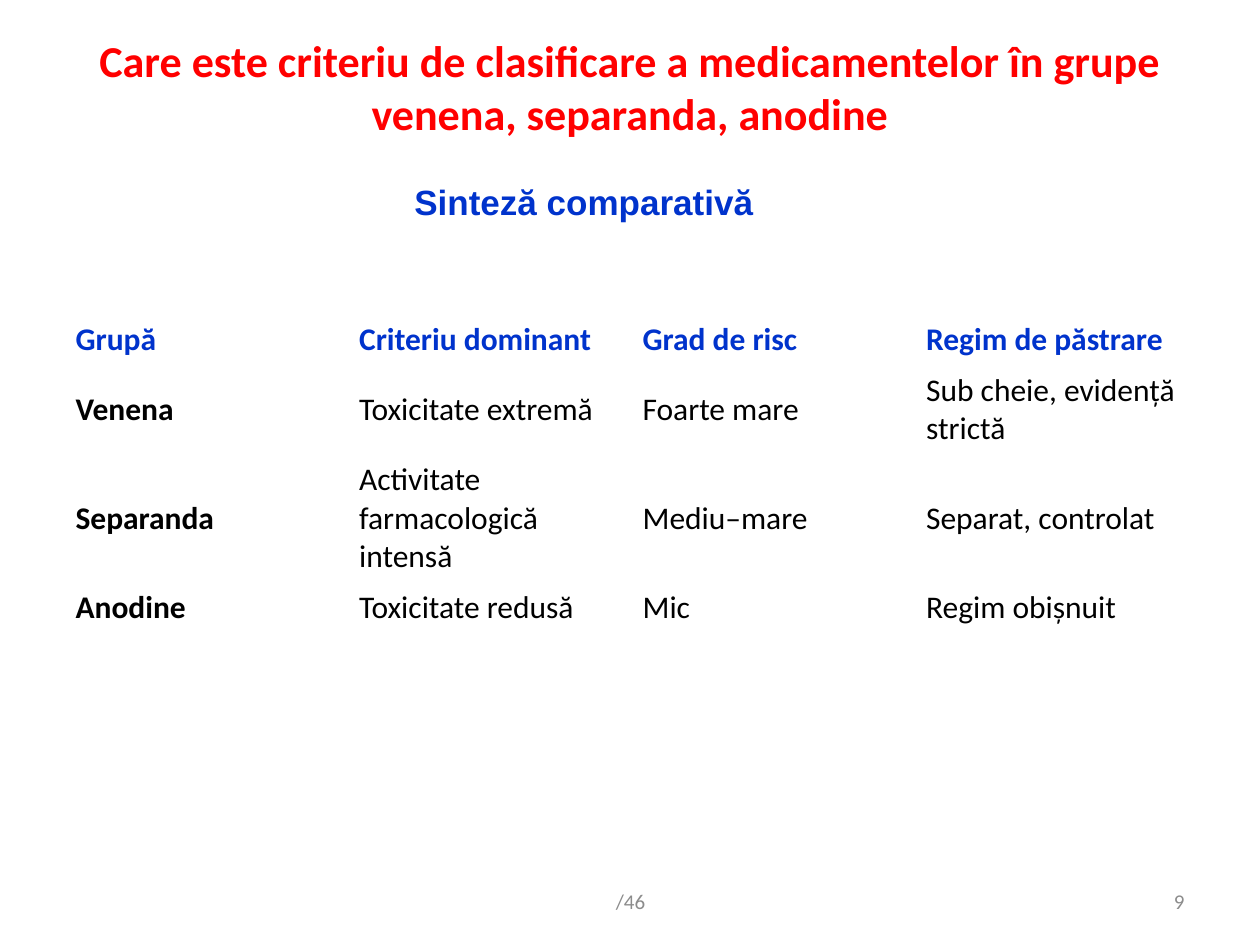
import pptx
import pptx.util
import pptx.dml.color
import pptx.enum.text
from dataclasses import dataclass

ALIGN = pptx.enum.text.PP_ALIGN
ANCHOR = pptx.enum.text.MSO_ANCHOR


@dataclass(frozen=True)
class Theme:
    font: str = "Calibri"
    accent_font: str = "Arial"
    red: str = "FF0000"
    blue: str = "0033CC"
    black: str = "000000"
    grey: str = "8C8C8C"
    title: float = 25.2
    subtitle: float = 20
    body: float = 18
    footer: float = 12


THEME = Theme()
WIDTH, HEIGHT = pptx.util.Inches(10), pptx.util.Inches(7.5)
MARGIN = 0.05  # share of the slide's width
CONTENT = 1 - 2 * MARGIN

ROWS = [
    ["Grupă", "Criteriu dominant", "Grad de risc", "Regim de păstrare"],
    ["Venena", "Toxicitate extremă", "Foarte mare", "Sub cheie, evidență strictă"],
    ["Separanda", "Activitate farmacologică intensă", "Mediu–mare", "Separat, controlat"],
    ["Anodine", "Toxicitate redusă", "Mic", "Regim obișnuit"],
]
ROW_HEIGHTS = [0.4, 0.7, 1.0, 0.4]  # inches, by number of text lines


def box(left, top, width, height):
    """Turn shares of the slide's size into lengths."""
    return (round(left * WIDTH), round(top * HEIGHT),
            round(width * WIDTH), round(height * HEIGHT))


def write(tf, text, size, color, bold=False, align=ALIGN.LEFT, font=THEME.font):
    p = tf.paragraphs[0]
    p.text = text
    p.alignment = align
    p.font.name = font
    p.font.size = pptx.util.Pt(size)
    p.font.bold = bold
    p.font.color.rgb = pptx.dml.color.RGBColor.from_string(color)


def add_title(slide, text):
    sp = slide.shapes.title
    sp.left, sp.top, sp.width, sp.height = box(MARGIN, 0.04, CONTENT, 0.1027)
    tf = sp.text_frame
    tf.word_wrap = True
    tf.auto_size = pptx.enum.text.MSO_AUTO_SIZE.NONE
    tf.vertical_anchor = ANCHOR.MIDDLE
    write(tf, text, THEME.title, THEME.red, True, ALIGN.CENTER)


def add_text(slide, place, text, *style, wrap=True, anchor=ANCHOR.MIDDLE):
    tf = slide.shapes.add_textbox(*box(*place)).text_frame
    tf.word_wrap = wrap
    tf.vertical_anchor = anchor
    write(tf, text, *style)


def add_table(slide, rows, heights):
    place = box(MARGIN, 0.332, CONTENT, sum(heights) / 7.5)
    table = slide.shapes.add_table(len(rows), len(rows[0]), *place).table
    table.first_row = table.horz_banding = False
    for i, (row, height) in enumerate(zip(rows, heights)):
        table.rows[i].height = pptx.util.Inches(height)
        for j, text in enumerate(row):
            cell = table.cell(i, j)
            cell.fill.background()
            cell.vertical_anchor = ANCHOR.MIDDLE
            color = THEME.blue if i == 0 else THEME.black
            write(cell.text_frame, text, THEME.body, color, i == 0 or j == 0)


def main():
    prs = pptx.Presentation()
    prs.slide_width, prs.slide_height = WIDTH, HEIGHT
    slide = prs.slides.add_slide(prs.slide_layouts[5])

    # Heading and comparison table
    add_title(slide, "Care este criteriu de clasificare a medicamentelor în grupe "
                     "venena, separanda, anodine")
    add_table(slide, ROWS, ROW_HEIGHTS)

    # Footer: page count and page number
    add_text(slide, (0.342, 0.927, 0.317, 0.053), "/46",
             THEME.footer, THEME.grey, False, ALIGN.CENTER)
    add_text(slide, (0.717, 0.927, 0.233, 0.053), "9",
             THEME.footer, THEME.grey, False, ALIGN.RIGHT)

    # Subtitle above the table
    add_text(slide, (0.319, 0.185, 0.291, 0.103), "Sinteză comparativă",
             THEME.subtitle, THEME.blue, True, ALIGN.LEFT, THEME.accent_font,
             wrap=False, anchor=ANCHOR.TOP)

    prs.save("out.pptx")


if __name__ == "__main__":
    main()
